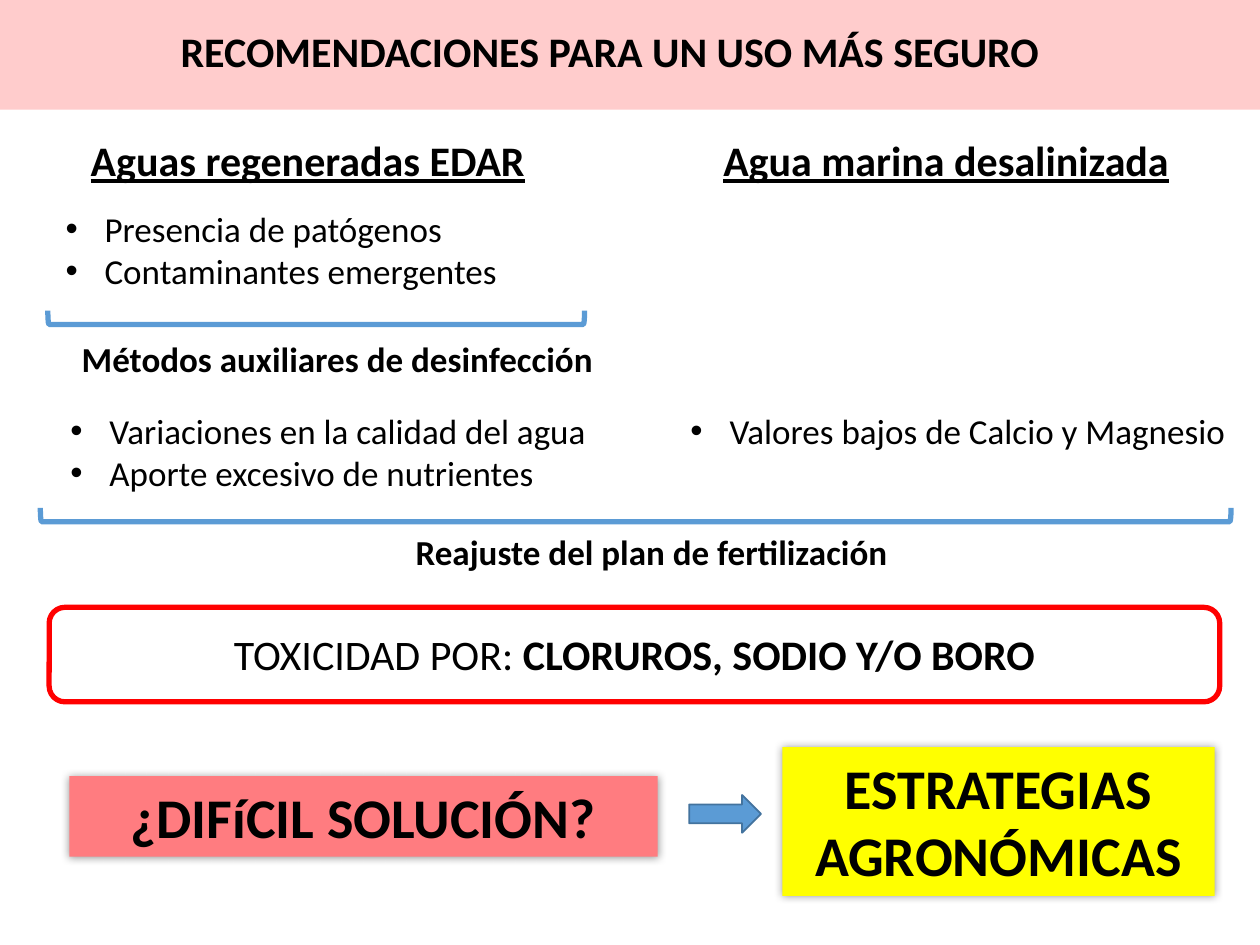
from lxml import etree
from pptx import Presentation
from pptx.dml.color import RGBColor
from pptx.enum.shapes import MSO_SHAPE
from pptx.enum.text import MSO_ANCHOR, MSO_AUTO_SIZE, PP_ALIGN
from pptx.oxml.ns import qn
from pptx.util import Inches, Pt

RECT = MSO_SHAPE.RECTANGLE
ROUND = MSO_SHAPE.ROUNDED_RECTANGLE
HOOK = MSO_SHAPE.LEFT_BRACKET
ARROW = MSO_SHAPE.RIGHT_ARROW
TOP = MSO_ANCHOR.TOP
LEFT, MID = PP_ALIGN.LEFT, PP_ALIGN.CENTER
FIXED = MSO_AUTO_SIZE.NONE

BLACK = RGBColor(0, 0, 0)
PINK = RGBColor(0xFF, 0xCC, 0xCC)
ROSE = RGBColor(0xFF, 0x7C, 0x80)
GOLD = RGBColor(0xFF, 0xFF, 0)
RED = RGBColor(0xFF, 0, 0)
BLUE = RGBColor(0x5B, 0x9B, 0xD5)
NAVY = RGBColor(0x43, 0x73, 0x9E)

WIDE, HIGH = Inches(10), Inches(7.5)
COL, ROW = WIDE / 100, HIGH / 75
HEAD, BODY, BIG = 24, 20, 32


def part(box, left, top, wide, high):
    return box[0] + left, box[1] + top, wide, high


def units(box):
    left, top, wide, high = box
    return int(left * COL), int(top * ROW), int(wide * COL), int(high * ROW)


def place(item, box):
    item.left, item.top, item.width, item.height = units(box)
    return item


def style(para, size, bold, align=LEFT):
    para.alignment = align
    para.space_before = Pt(0)
    font = para.font
    font.name, font.size, font.bold = "Calibri", Pt(size), bold
    font.color.rgb = BLACK


def write(item, lines, size, bold=False, align=LEFT, wrap=False):
    frame = item.text_frame
    frame.text = "\n".join(lines)
    frame.word_wrap = wrap
    frame.auto_size = FIXED
    frame.vertical_anchor = TOP
    for para in frame.paragraphs:
        style(para, size, bold, align)
    return frame.paragraphs


def label(slide, box, text, size, **look):
    item = slide.shapes.add_textbox(*units(box))
    return write(item, [text], size, **look)


def points(item, lines):
    for para in write(item, lines, BODY, wrap=True):
        props = para._p.get_or_add_pPr()
        props.set("marL", str(Inches(0.31)))
        props.set("indent", str(Inches(-0.31)))
        etree.SubElement(props, qn("a:buFont"), typeface="Arial")
        etree.SubElement(props, qn("a:buChar"), char="•")


def shape(slide, kind, box, fill=None, line=None, width=3):
    item = slide.shapes.add_shape(kind, *units(box))
    item.shadow.inherit = False
    if fill is None:
        item.fill.background()
    else:
        item.fill.solid()
        item.fill.fore_color.rgb = fill
    if line is None:
        item.line.fill.background()
    else:
        item.line.color.rgb = line
        item.line.width = Pt(width)
    return item


def bracket(slide, box):
    left, top, wide, high = box
    shift = (wide - high) / 2
    turned = left + shift, top - shift, high, wide
    shape(slide, HOOK, turned, line=BLUE).rotation = 270


def glow(item):
    effects = item.element.spPr.find(qn("a:effectLst"))
    outer = etree.SubElement(effects, qn("a:outerShdw"),
                             blurRad=str(Pt(5)), dist="0", dir="0")
    color = etree.SubElement(outer, qn("a:srgbClr"), val="000000")
    etree.SubElement(color, qn("a:alpha"), val="40000")


def banner(slide, box):
    band = shape(slide, RECT, box, PINK)
    title = place(slide.shapes.title, part(box, 13, 1.5, 70.8, 5))
    title.element.addprevious(band.element)
    write(title, ["RECOMENDACIONES PARA UN USO MÁS SEGURO"], HEAD, True, MID)


def header(item, box, text):
    para = write(place(item, box), [text], HEAD, True)[0]
    para.font.underline = True


def headers(slide, box):
    holes = slide.placeholders
    header(holes[1], part(box, 0, 0, 36.8, 5), "Aguas regeneradas EDAR")
    header(holes[3], part(box, 50.2, 0, 37.7, 5), "Agua marina desalinizada")


def hygiene(slide, box):
    item = place(slide.placeholders[2], part(box, 0.4, 0, 45.8, 7.7))
    points(item, ["Presencia de patógenos", "Contaminantes emergentes"])
    bracket(slide, part(box, 0, 8.65, 42.6, 1.1))
    label(slide, part(box, 1.7, 10.3, 43, 4.4),
          "Métodos auxiliares de desinfección", BODY, bold=True)


def feeding(slide, box):
    item = slide.shapes.add_textbox(*units(part(box, 1.4, 0, 43.8, 7.7)))
    points(item, ["Variaciones en la calidad del agua",
                  "Aporte excesivo de nutrientes"])
    item = place(slide.placeholders[4], part(box, 50.6, 0, 44.9, 4.4))
    points(item, ["Valores bajos de Calcio y Magnesio"])
    bracket(slide, part(box, 0, 8.3, 94.5, 1.1))
    label(slide, part(box, 28.8, 9.6, 39.8, 4.4),
          "Reajuste del plan de fertilización", BODY, bold=True)


def toxins(slide, box):
    shape(slide, ROUND, box, line=RED)
    para = label(slide, part(box, 8.6, 1.2, 75.7, 5), "TOXICIDAD POR: ",
                 HEAD, bold=None, align=MID, wrap=True)[0]
    run = para.add_run()
    run.text = "CLORUROS, SODIO Y/O BORO"
    run.font.bold = True


def answer(slide, box):
    cards = [((0, 2.3, 46.7, 6.4), ROSE, "¿DIFíCIL SOLUCIÓN?"),
             ((56.6, 0, 34.3, 11.8), GOLD, "ESTRATEGIAS AGRONÓMICAS")]
    for spot, fill, text in cards:
        card = shape(slide, RECT, part(box, *spot), fill)
        glow(card)
        write(card, [text], BIG, True, MID, True)
    shape(slide, ARROW, part(box, 49.2, 3.8, 5.7, 3), BLUE, NAVY, 1)


def main():
    deck = Presentation()
    deck.slide_width, deck.slide_height = WIDE, HIGH
    slide = deck.slides.add_slide(deck.slide_layouts[4])
    banner(slide, (0, 0, 100, 8.7))
    headers(slide, (6.2, 10.2, 88, 5))
    hygiene(slide, (3.8, 16, 46, 14.7))
    feeding(slide, (3.2, 32, 95.5, 14))
    toxins(slide, (3.9, 48.2, 92.9, 7.5))
    answer(slide, (5.5, 59.3, 90.9, 11.8))
    deck.save("out.pptx")


if __name__ == "__main__":
    main()
